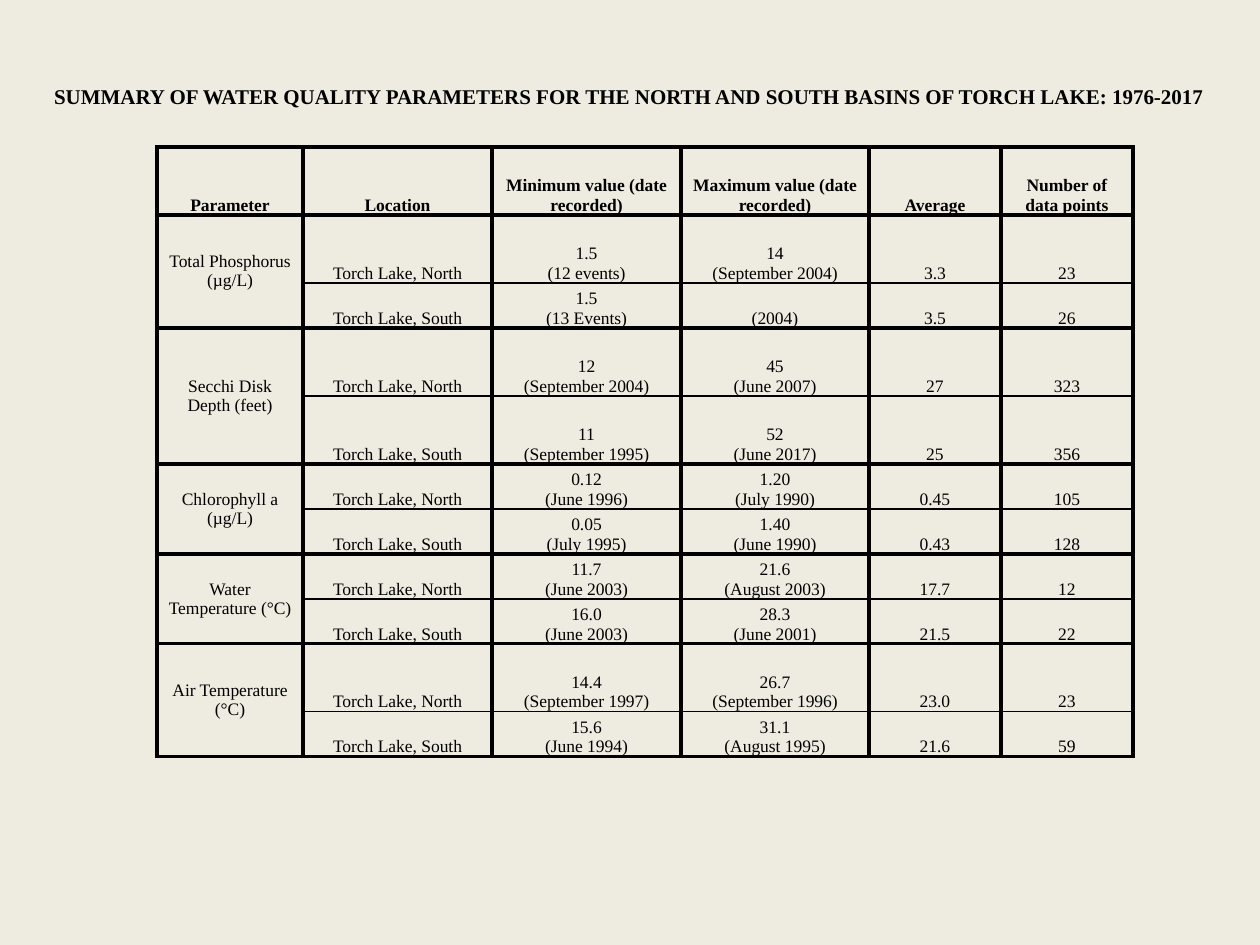
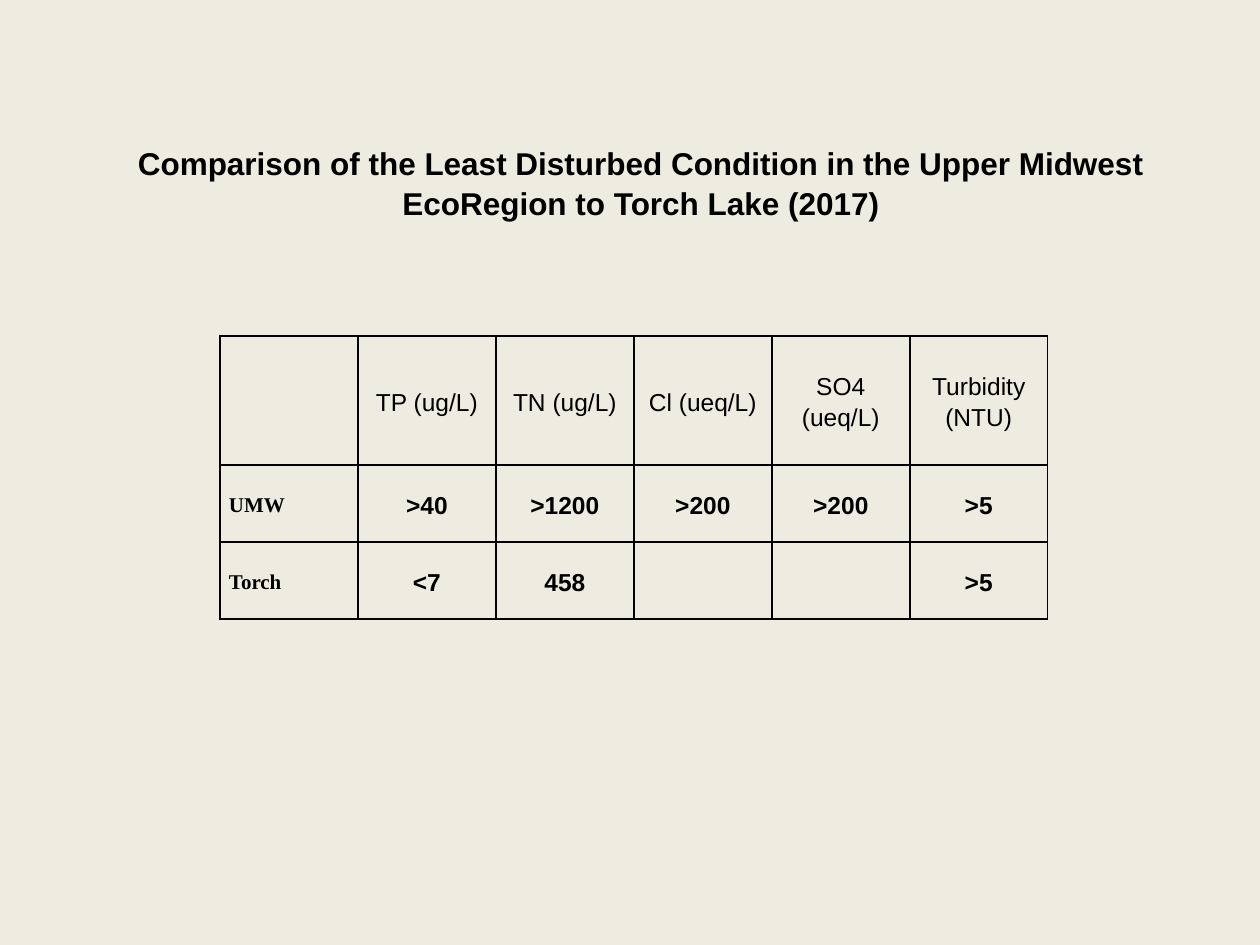
from lxml.etree import SubElement
from pptx import Presentation
from pptx.dml.color import RGBColor
from pptx.enum.text import MSO_ANCHOR, MSO_AUTO_SIZE, PP_ALIGN
from pptx.oxml.ns import qn
from pptx.util import Emu, Pt

SCALE = 914400 / 126
INK, PAPER = "000000", "EEECE1"
SERIF, SANS = "Times New Roman", "Arial"
THICK, THIN = 2.25, 1


def px(n):
    return Emu(round(n * SCALE))


def tint(code):
    return RGBColor.from_string(code)


class Deck:
    """Holds the shared style and the current slide."""

    def __init__(self):
        self.prs = Presentation()
        self.prs.slide_width, self.prs.slide_height = px(1260), px(945)
        back = self.prs.slide_master.background.fill
        back.solid()
        back.fore_color.rgb = tint(PAPER)
        self.slide = None

    def page(self):
        self.slide = self.prs.slides.add_slide(self.prs.slide_layouts[5])

    def text(self, frame, words, size, face, bold, align, lead=1.0):
        for i, line in enumerate(words.split("\n")):
            para = frame.add_paragraph() if i else frame.paragraphs[0]
            para.alignment, para.line_spacing = align, lead
            run = para.add_run()
            run.text = line
            font = run.font
            font.size, font.name, font.bold = Pt(size), face, bold
            font.color.rgb = tint(INK)

    def title(self, words, box, size, face, align, anchor, foot=6, lead=1.0):
        shape = self.slide.shapes.title
        shape.left, shape.top, shape.width, shape.height = map(px, box)
        frame = shape.text_frame
        frame.auto_size, frame.word_wrap = MSO_AUTO_SIZE.NONE, True
        frame.vertical_anchor = anchor
        frame.margin_left = frame.margin_right = px(12)
        frame.margin_top, frame.margin_bottom = px(6), px(foot)
        self.text(frame, words, size, face, True, align, lead)

    def table(self, left, top, cols, rows):
        shape = self.slide.shapes.add_table(
            len(rows), len(cols), px(left), px(top), px(sum(cols)), px(sum(rows)))
        grid = shape.table
        grid.first_row = grid.horz_banding = False
        for col, wide in zip(grid.columns, cols):
            col.width = px(wide)
        for row, high in zip(grid.rows, rows):
            row.height = px(high)
        return grid

    def cell(self, cell, words, pad, anchor, edges, **style):
        cell.margin_left = cell.margin_right = px(pad)
        cell.margin_top = cell.margin_bottom = 0
        cell.vertical_anchor = anchor
        self.edge(cell, edges)
        cell.fill.background()
        if words:
            self.text(cell.text_frame, words, **style)

    def edge(self, cell, edges):
        """Draw the left, right, top and bottom borders, widths in points."""
        props = cell._tc.get_or_add_tcPr()
        for side, wide in zip("LRTB", edges):
            line = SubElement(props, qn(f"a:ln{side}"), w=str(int(Pt(wide))))
            fill = SubElement(line, qn("a:solidFill"))
            SubElement(fill, qn("a:srgbClr"), val=INK)


HEADS = ["Parameter", "Location", "Minimum value (date recorded)",
         "Maximum value (date recorded)", "Average", "Number of data points"]
# Each parameter has a north row and a south row
BASINS = [
    ("Total Phosphorus\n(µg/L)",
     ["1.5\n(12 events)", "14\n(September 2004)", "3.3", "23"],
     ["1.5\n(13 Events)", "(2004)", "3.5", "26"]),
    ("Secchi Disk Depth (feet)",
     ["12\n(September 2004)", "45\n(June 2007)", "27", "323"],
     ["11\n(September 1995)", "52\n(June 2017)", "25", "356"]),
    ("Chlorophyll a (µg/L)",
     ["0.12\n(June 1996)", "1.20\n(July 1990)", "0.45", "105"],
     ["0.05\n(July 1995)", "1.40\n(June 1990)", "0.43", "128"]),
    ("Water Temperature (°C)",
     ["11.7\n(June 2003)", "21.6\n(August 2003)", "17.7", "12"],
     ["16.0\n(June 2003)", "28.3\n(June 2001)", "21.5", "22"]),
    ("Air Temperature (°C)",
     ["14.4\n(September 1997)", "26.7\n(September 1996)", "23.0", "23"],
     ["15.6\n(June 1994)", "31.1\n(August 1995)", "21.6", "59"]),
]
REGION = [
    ["", "TP (ug/L)", "TN (ug/L)", "Cl (ueq/L)", "SO4 (ueq/L)", "Turbidity (NTU)"],
    ["UMW", ">40", ">1200", ">200", ">200", ">5"],
    ["Torch", "<7", "458", "", "", ">5"],
]


def summary(deck):
    deck.page()
    deck.title("SUMMARY OF WATER QUALITY PARAMETERS FOR THE NORTH AND SOUTH "
               "BASINS OF TORCH LAKE: 1976-2017", (42, 0, 1186, 152), 12, SERIF,
               PP_ALIGN.LEFT, MSO_ANCHOR.BOTTOM, foot=43)

    # Tall and short rows
    tall, short = 68, 45
    highs = [tall if mark == "T" else short for mark in "TTSTTSSSSTS"]
    grid = deck.table(157, 147, [146, 189, 189, 188, 132, 132], highs)

    # Header row, then a pair of rows per parameter
    rows = [HEADS]
    for name, north, south in BASINS:
        rows.append([name, "Torch Lake, North", *north])
        rows.append(["", "Torch Lake, South", *south])
    for r, row in enumerate(rows):
        for c, words in enumerate(row):
            roof = foot = THICK
            if r and c:
                roof, foot = (THICK, THIN) if r % 2 else (THIN, THICK)
            anchor = MSO_ANCHOR.BOTTOM if c or not r else MSO_ANCHOR.MIDDLE
            deck.cell(grid.cell(r, c), words, 8, anchor, (THICK, THICK, roof, foot),
                      size=10, face=SERIF, bold=r == 0, align=PP_ALIGN.CENTER)
    for r in range(1, len(rows), 2):
        grid.cell(r, 0).merge(grid.cell(r + 1, 0))


def compare(deck):
    deck.page()
    deck.title("Comparison of the Least Disturbed Condition in the Upper Midwest "
               "EcoRegion to Torch Lake (2017)", (116, 136, 1050, 127), 18, SANS,
               PP_ALIGN.CENTER, MSO_ANCHOR.TOP, lead=1.05)

    # Row names in serif, values in sans
    grid = deck.table(220, 336, [138] * 6, [129, 77, 77])
    for r, row in enumerate(REGION):
        for c, words in enumerate(row):
            size, face, align = ((14, SANS, PP_ALIGN.CENTER) if c
                                 else (12, SERIF, PP_ALIGN.LEFT))
            deck.cell(grid.cell(r, c), words, 9, MSO_ANCHOR.MIDDLE, [THIN] * 4,
                      size=size, face=face, bold=r > 0, align=align, lead=1.15)


def main():
    deck = Deck()
    summary(deck)
    compare(deck)
    deck.prs.save("out.pptx")


if __name__ == "__main__":
    main()
